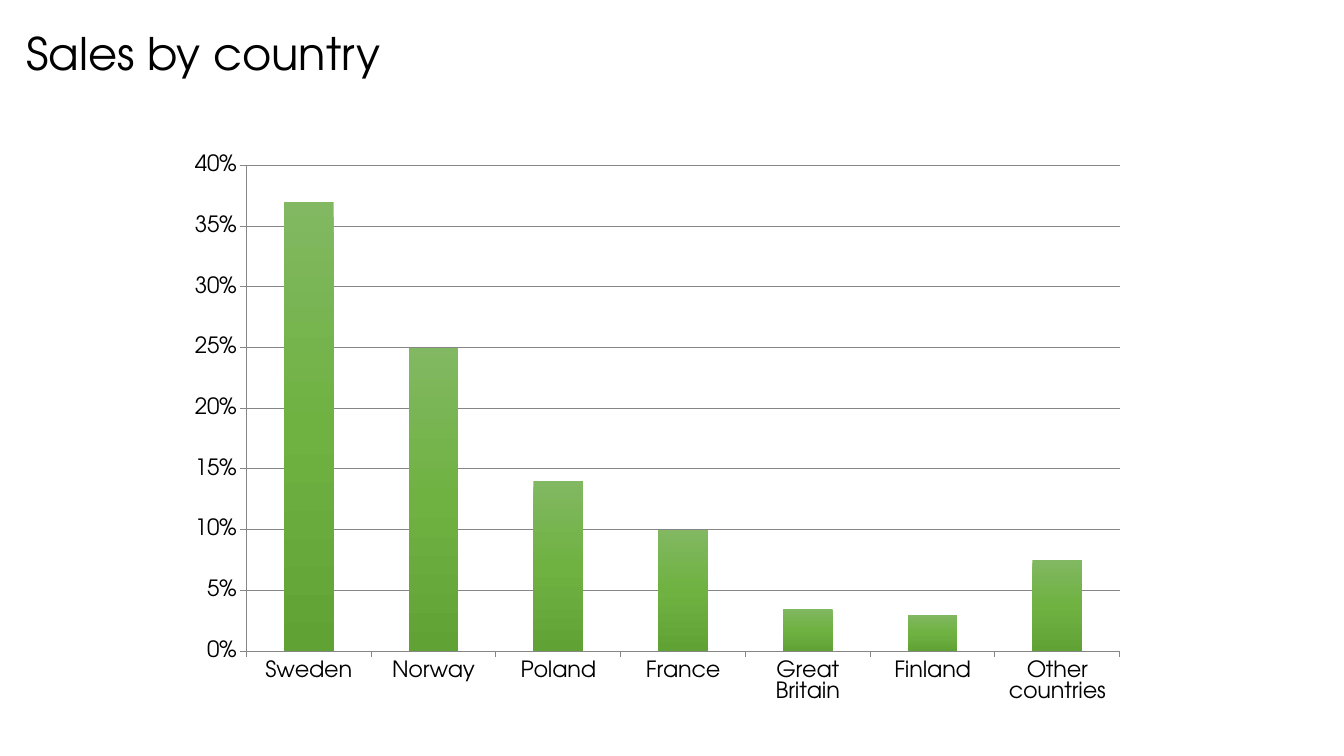
from copy import deepcopy
from typing import NamedTuple

from lxml import etree
from pptx import Presentation
from pptx.chart.axis import CategoryAxis, ValueAxis
from pptx.chart.chart import Chart
from pptx.chart.data import CategoryChartData
from pptx.chart.series import BarSeries
from pptx.dml.color import RGBColor
from pptx.enum.chart import XL_CHART_TYPE, XL_TICK_MARK
from pptx.enum.text import MSO_AUTO_SIZE
from pptx.oxml.ns import qn
from pptx.slide import Slide
from pptx.util import Pt

COLUMNS = XL_CHART_TYPE.COLUMN_CLUSTERED
TICK_OUTSIDE = XL_TICK_MARK.OUTSIDE
TICK_NONE = XL_TICK_MARK.NONE
GROW_TO_TEXT = MSO_AUTO_SIZE.SHAPE_TO_FIT_TEXT

FONT = "TeX Gyre Adventor"
COLORS = {
    "text": "000000",
    "axis": "868686",
    "bar_top": "81B861",
    "bar_middle": "6FB242",
    "bar_bottom": "61A235",
}


class CountryShare(NamedTuple):
    country: str
    share: float


class GradientStep(NamedTuple):
    position: float
    color: str


SHARES = [
    CountryShare("Sweden", 0.37),
    CountryShare("Norway", 0.25),
    CountryShare("Poland", 0.14),
    CountryShare("France", 0.1),
    CountryShare("Great Britain", 0.035),
    CountryShare("Finland", 0.03),
    CountryShare("Other countries", 0.075),
]
BAR_GRADIENT = [
    GradientStep(0, "bar_top"),
    GradientStep(0.5, "bar_middle"),
    GradientStep(1, "bar_bottom"),
]
PLOT_AREA = {"x": 0.07, "y": 0.04, "w": 0.91, "h": 0.85}


def rgb(name: str) -> RGBColor:
    return RGBColor.from_string(COLORS[name])


def add_title(slide: Slide, text: str) -> None:
    frame = slide.shapes.add_textbox(Pt(12), Pt(15), Pt(269), Pt(46)).text_frame
    frame.word_wrap = False
    frame.auto_size = GROW_TO_TEXT
    title = frame.paragraphs[0]
    title.text = text
    title.font.name = FONT
    title.font.size = Pt(32)
    title.font.color.rgb = rgb("text")


def style_axis(axis: CategoryAxis | ValueAxis) -> None:
    axis.major_tick_mark = TICK_OUTSIDE
    axis.minor_tick_mark = TICK_NONE
    axis.format.line.color.rgb = rgb("axis")
    axis.format.line.width = Pt(0.75)


def fill_bars(chart: Chart, sales: BarSeries) -> None:
    """Give the bars a vertical three-step gradient."""
    sales.invert_if_negative = False
    fill = sales.format.fill
    fill.gradient()
    fill.gradient_angle = 270
    stop_list = next(chart.element.iter(qn("a:gsLst")))
    stop_list.insert(1, deepcopy(stop_list[0]))
    for stop, step in zip(fill.gradient_stops, BAR_GRADIENT):
        stop.position = step.position
        stop.color.rgb = rgb(step.color)


def place_plot(chart: Chart) -> None:
    """Fix the inner plot area as fractions of the chart."""
    plot_area = next(chart.element.iter(qn("c:plotArea")))
    for automatic in plot_area.findall(qn("c:layout")):
        plot_area.remove(automatic)
    layout = etree.Element(qn("c:layout"))
    manual = etree.SubElement(layout, qn("c:manualLayout"))
    settings = {"layoutTarget": "inner", "xMode": "edge", "yMode": "edge", **PLOT_AREA}
    for tag, value in settings.items():
        etree.SubElement(manual, qn(f"c:{tag}")).set("val", str(value))
    plot_area.insert(0, layout)


def add_sales_chart(slide: Slide) -> None:
    data = CategoryChartData(number_format="0%")
    data.categories = [item.country for item in SHARES]
    data.add_series("Series 1", [item.share for item in SHARES])
    chart = slide.shapes.add_chart(
        COLUMNS, Pt(128), Pt(102), Pt(685.5), Pt(408), data
    ).chart
    chart.has_title = False
    chart.has_legend = False
    chart.font.name = FONT
    chart.font.size = Pt(16)
    chart.font.color.rgb = rgb("text")

    plot = chart.plots[0]
    plot.gap_width = 150
    plot.vary_by_categories = False
    fill_bars(chart, plot.series[0])

    style_axis(chart.category_axis)
    shares = chart.value_axis
    style_axis(shares)
    shares.minimum_scale = 0
    shares.maximum_scale = 0.4
    shares.major_unit = 0.05
    shares.tick_labels.number_format = "0%"
    shares.tick_labels.number_format_is_linked = False
    shares.has_major_gridlines = True
    shares.major_gridlines.format.line.color.rgb = rgb("axis")
    shares.major_gridlines.format.line.width = Pt(0.75)
    place_plot(chart)


def main() -> None:
    presentation = Presentation()
    presentation.slide_width = Pt(960)
    presentation.slide_height = Pt(540)
    slide = presentation.slides.add_slide(presentation.slide_layouts[6])
    add_title(slide, "Sales by country")
    add_sales_chart(slide)
    presentation.save("out.pptx")


if __name__ == "__main__":
    main()
